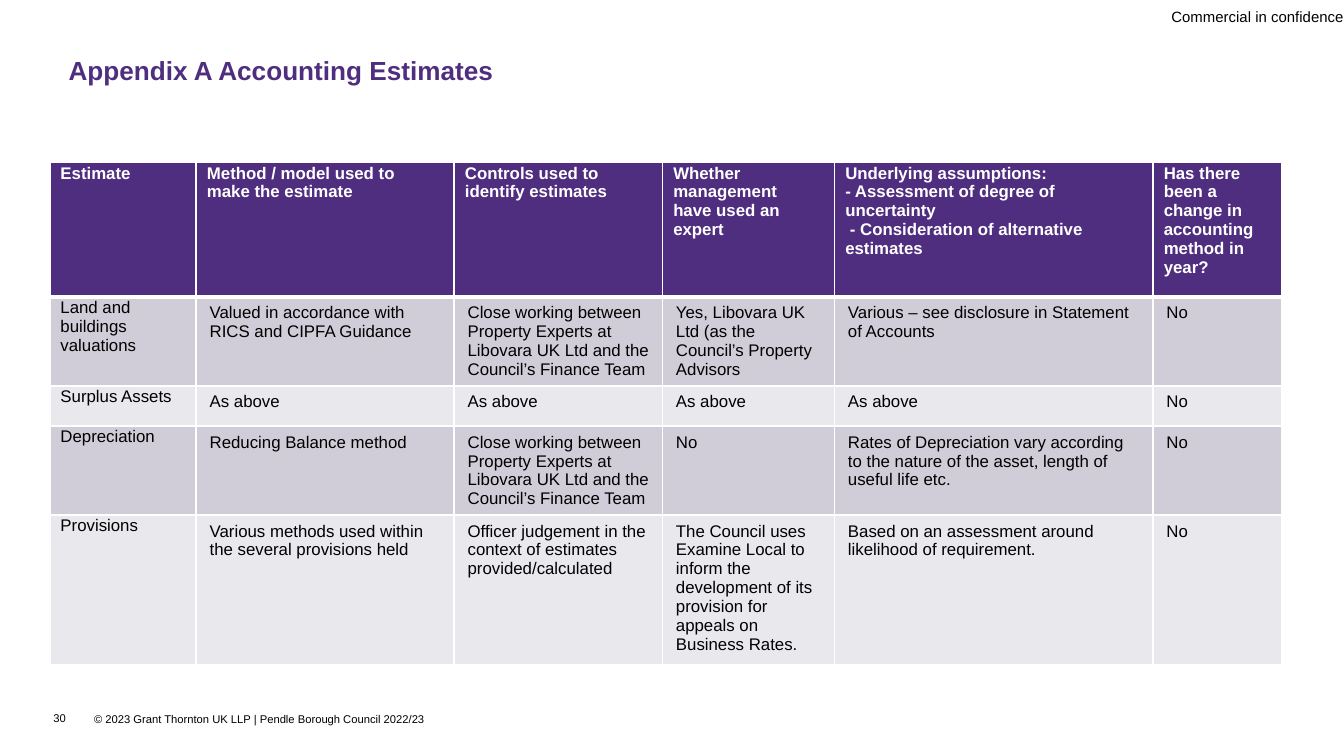
from lxml.etree import SubElement
from pptx import Presentation
from pptx.dml.color import RGBColor
from pptx.enum.text import MSO_ANCHOR, MSO_AUTO_SIZE, PP_ALIGN
from pptx.oxml.ns import qn
from pptx.util import Inches, Pt

PURPLE = RGBColor(0x4F, 0x2D, 0x7F)
BAND_DARK = RGBColor(0xD0, 0xCD, 0xD8)
BAND_LIGHT = RGBColor(0xE9, 0xE8, 0xEC)
WHITE = RGBColor(0xFF, 0xFF, 0xFF)
BLACK = RGBColor(0, 0, 0)

TITLE = "Appendix A Accounting Estimates"
CONFIDENCE = "Commercial in confidence"
COPYRIGHT = "© 2023 Grant Thornton UK LLP | Pendle Borough Council 2022/23"
PAGE = "30"
CONTROLS = ("Close working between Property Experts at Libovara UK Ltd "
            "and the Council’s Finance Team")
ROWS = [
    ["Estimate",
     "Method / model used to make the estimate",
     "Controls used to identify estimates",
     "Whether management have used an expert",
     "Underlying assumptions:\n- Assessment of degree of uncertainty\n"
     " - Consideration of alternative estimates",
     "Has there been a\nchange in accounting\nmethod in year?"],
    ["Land and buildings valuations",
     "Valued in accordance with RICS and CIPFA Guidance",
     CONTROLS,
     "Yes, Libovara UK Ltd (as the Council’s Property Advisors",
     "Various – see disclosure in Statement of Accounts",
     "No"],
    ["Surplus Assets", "As above", "As above", "As above", "As above", "No"],
    ["Depreciation",
     "Reducing Balance method",
     CONTROLS,
     "No",
     "Rates of Depreciation vary according to the nature of the asset, "
     "length of useful life etc.",
     "No"],
    ["Provisions",
     "Various methods used within the several provisions held",
     "Officer judgement in the context of estimates provided/calculated",
     "The Council uses Examine Local to inform the development of its "
     "provision for appeals on Business Rates.",
     "Based on an assessment around likelihood of requirement.",
     "No"],
]
COL_WIDTHS = [1.09, 1.92, 1.55, 1.28, 2.37, 0.96]
ROW_HEIGHTS = [1.0, 0.66, 0.3, 0.66, 1.08]
HEADER_MARGINS = (0.08, 0.01, 0.12, 0.01)
NAME_MARGINS = (0.08, 0.01, 0.08, 0.01)
BODY_MARGINS = (0.1, 0.05, 0.1, 0.01)


def style(tf, size, color, bold=False):
    for p in tf.paragraphs:
        for r in p.runs:
            r.font.name = "Arial"
            r.font.size = Pt(size)
            r.font.bold = bold
            r.font.color.rgb = color


def set_margins(box, left, top, right, bottom):
    box.margin_left, box.margin_top = Inches(left), Inches(top)
    box.margin_right, box.margin_bottom = Inches(right), Inches(bottom)


def add_label(slide, text, at, size, margins=(0, 0, 0, 0)):
    tf = slide.shapes.add_textbox(*map(Inches, at)).text_frame
    tf.word_wrap = True
    set_margins(tf, *margins)
    tf.text = text
    style(tf, size, BLACK)
    return tf


def set_borders(cell, top, bottom):
    tc_pr = cell._tc.get_or_add_tcPr()
    sides = {"a:lnL": 1, "a:lnR": 1, "a:lnT": top, "a:lnB": bottom}
    for i, (tag, width) in enumerate(sides.items()):
        ln = SubElement(tc_pr, qn(tag), w=str(Pt(width)))
        fill = SubElement(ln, qn("a:solidFill"))
        SubElement(fill, qn("a:srgbClr"), val=str(WHITE))
        tc_pr.insert(i, ln)


def add_estimates_table(slide):
    table = slide.shapes.add_table(
        len(ROWS), len(COL_WIDTHS), Inches(0.37), Inches(1.21),
        Inches(sum(COL_WIDTHS)), Inches(sum(ROW_HEIGHTS))).table
    for col, width in zip(table.columns, COL_WIDTHS):
        col.width = Inches(width)
    for row, height in zip(table.rows, ROW_HEIGHTS):
        row.height = Inches(height)
    for i, texts in enumerate(ROWS):
        header = i == 0
        band = PURPLE if header else BAND_DARK if i % 2 else BAND_LIGHT
        for j, text in enumerate(texts):
            cell = table.cell(i, j)
            cell.text = text
            margins = NAME_MARGINS if j == 0 else BODY_MARGINS
            set_margins(cell, *(HEADER_MARGINS if header else margins))
            cell.fill.solid()
            cell.fill.fore_color.rgb = band
            set_borders(cell, 3 if i == 1 else 1, 3 if header else 1)
            style(cell.text_frame, 9, WHITE if header else BLACK, header)


prs = Presentation()
prs.slide_width = Inches(10)
prs.slide_height = prs.slide_width * 9 // 16
slide = prs.slides.add_slide(prs.slide_layouts[5])

add_label(slide, COPYRIGHT, (0.7, 5.3, 4.31, 0.1), 6)
tf = add_label(slide, CONFIDENCE, (8.44, 0, 1.56, 0.24), 8)
tf.word_wrap = False
tf.auto_size = MSO_AUTO_SIZE.SHAPE_TO_FIT_TEXT
tf.vertical_anchor = MSO_ANCHOR.MIDDLE
tf.paragraphs[0].alignment = PP_ALIGN.RIGHT

title = slide.shapes.title
title.left, title.top, title.width, title.height = map(
    Inches, (0.51, 0.43, 8.98, 0.36))
tf = title.text_frame
tf.text = TITLE
tf.vertical_anchor = MSO_ANCHOR.TOP
set_margins(tf, 0, 0, 0, 0)
tf.paragraphs[0].alignment = PP_ALIGN.LEFT
tf.paragraphs[0].line_spacing = 0.9
style(tf, 14, PURPLE, True)

add_estimates_table(slide)
add_label(slide, PAGE, (0.3, 5.24, 0.4, 0.23), 6, (0.1, 0.05, 0.1, 0.05))

prs.save("out.pptx")
